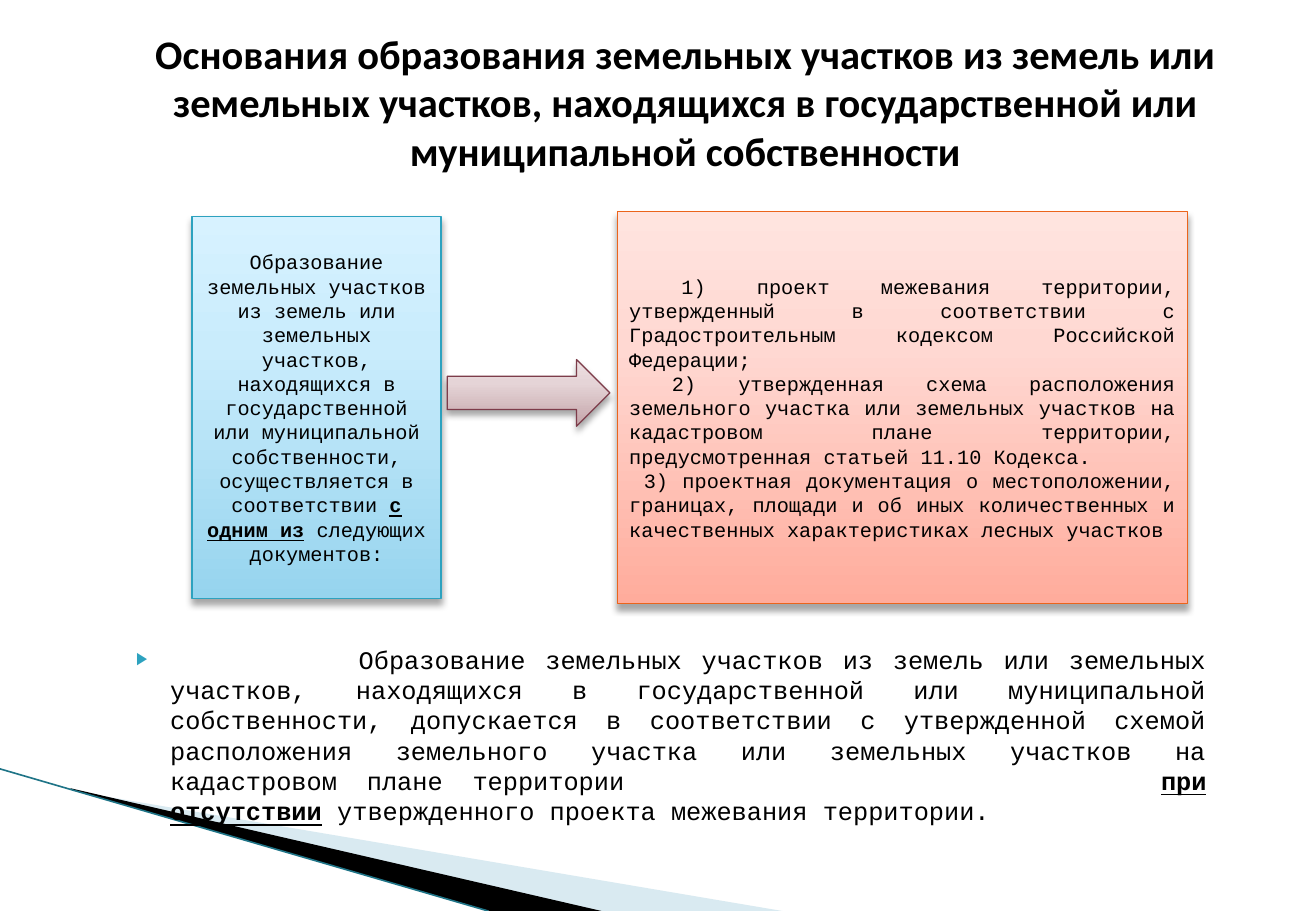
import copy
from dataclasses import dataclass

import pptx
import pptx.dml.color
import pptx.enum.shapes
import pptx.enum.text
import pptx.oxml
import pptx.oxml.ns
import pptx.util
from lxml import etree

ALIGN = pptx.enum.text.PP_ALIGN
ANCHOR = pptx.enum.text.MSO_ANCHOR
SHAPE = pptx.enum.shapes.MSO_SHAPE
qn = pptx.oxml.ns.qn


@dataclass(frozen=True)
class Theme:
    heading_font: str = "Calibri"
    text_font: str = "Courier New"
    title_size: int = 24
    body_size: int = 15
    box_size: int = 12
    ink: str = "000000"
    accent: str = "2DA2BF"
    pale: str = "A0CBDC"
    edge: str = "1F7487"
    # Each palette: outline, then gradient from bottom to top
    blue: tuple = ("2DA2BF", "96D4EE", "C9ECFC", "D7F2FF")
    coral: tuple = ("EB641B", "FFAC9C", "FFD8D2", "FFE4DF")
    mauve: tuple = ("7D3C4A", "C4A5A9", "E5D4D7", "EEE0E2")
    stops: tuple = (0, 0.65, 1)


def rgb(value):
    return pptx.dml.color.RGBColor.from_string(value)


def assign(target, values):
    for name, value in values.items():
        setattr(target, name, value)


def add_xml(parent, tag, **attributes):
    return etree.SubElement(parent, qn(tag), attributes)


class SlideBuilder:
    """Holds the theme and the slide; lengths are percent of the slide size."""

    def __init__(self, presentation, theme):
        self.theme = theme
        self.width, self.height = presentation.slide_width, presentation.slide_height
        self.slide = presentation.slides.add_slide(presentation.slide_layouts[1])
        self.shapes = self.slide.shapes

    def point(self, x, y):
        return int(self.width * x / 100), int(self.height * y / 100)

    def frame(self, left, top, width, height):
        return self.point(left, top) + self.point(width, height)

    def wedge(self, points, color, opacity=None):
        corners = [self.point(*point) for point in points]
        builder = self.shapes.build_freeform(*corners[0])
        builder.add_line_segments(corners[1:], close=True)
        shape = builder.convert_to_shape()
        shape.shadow.inherit = False
        shape.line.fill.background()
        shape.fill.solid()
        shape.fill.fore_color.rgb = rgb(color)
        if opacity:
            color_element = next(shape._element.spPr.iter(qn("a:srgbClr")))
            add_xml(color_element, "a:alpha", val=str(opacity * 1000))

    def line(self, start, end, color, width):
        connector = self.shapes.add_connector(
            pptx.enum.shapes.MSO_CONNECTOR.STRAIGHT, *self.point(*start), *self.point(*end))
        connector.line.color.rgb = rgb(color)
        connector.line.width = pptx.util.Pt(width)
        add_xml(connector._element.spPr, "a:effectLst")

    def panel(self, kind, frame, palette):
        shape = self.shapes.add_shape(kind, *self.frame(*frame))
        outline, *colors = palette
        shape.line.color.rgb = rgb(outline)
        shape.line.width = pptx.util.Pt(0.75)
        # Three-stop gradient
        shape.fill.gradient()
        shape.fill.gradient_angle = 90
        stop_list = next(shape._element.spPr.iter(qn("a:gsLst")))
        stop_list.append(copy.deepcopy(stop_list[-1]))
        for stop, color, position in zip(shape.fill.gradient_stops, colors, self.theme.stops):
            stop.color.rgb = rgb(color)
            stop.position = position
        # Soft shadow below
        shape.shadow.inherit = False
        effects = shape._element.spPr.find(qn("a:effectLst"))
        shadow = add_xml(effects, "a:outerShdw", blurRad=str(pptx.util.Pt(4)),
                         dist=str(pptx.util.Pt(3)), dir="5400000", rotWithShape="0")
        color_element = add_xml(shadow, "a:srgbClr", val=self.theme.ink)
        add_xml(color_element, "a:alpha", val="35000")
        return shape

    def placeholder(self, shape, frame):
        assign(shape, dict(zip(("left", "top", "width", "height"), self.frame(*frame))))
        self.shapes._spTree.append(shape._element)
        return shape

    def text(self, shape, paragraphs, size, font, align, anchor=ANCHOR.MIDDLE, indents=()):
        """Each paragraph is a list of (text, format values, letter spacing)."""
        text_frame = shape.text_frame
        assign(text_frame, {"word_wrap": True, "vertical_anchor": anchor,
                            "auto_size": pptx.enum.text.MSO_AUTO_SIZE.NONE})
        for index, runs in enumerate(paragraphs):
            paragraph = text_frame.add_paragraph() if index else text_frame.paragraphs[0]
            assign(paragraph, {"alignment": align, "space_before": pptx.util.Pt(0)})
            if indents:
                properties = paragraph._p.get_or_add_pPr()
                properties.set("marL", "0")
                properties.set("indent", str(pptx.util.Inches(indents[index])))
            for content, values, spacing in runs:
                run = paragraph.add_run()
                run.text = content
                assign(run.font, {"name": font, "size": pptx.util.Pt(size), **values})
                run.font.color.rgb = rgb(self.theme.ink)
                if spacing:
                    run._r.get_or_add_rPr().set("spc", str(spacing * 100))

    def bullet(self, paragraph, margin, indent):
        properties = paragraph._p.get_or_add_pPr()
        properties.set("marL", str(pptx.util.Inches(margin)))
        properties.set("indent", str(pptx.util.Inches(indent)))
        color = add_xml(properties, "a:buClr")
        add_xml(color, "a:srgbClr", val=self.theme.accent)
        add_xml(properties, "a:buSzPct", val="68000")
        add_xml(properties, "a:buChar", char="▶")


def plain(content, spacing=0):
    return content, {"bold": False}, spacing


def strong(content, underline=True):
    return content, {"bold": True, "underline": underline}, 0


def main():
    presentation = pptx.Presentation()
    presentation.slide_width = pptx.util.Inches(10.83)
    presentation.slide_height = pptx.util.Inches(7.5)
    theme = Theme()
    builder = SlideBuilder(presentation, theme)

    # Corner decoration
    builder.wedge([(5.45, 86.8), (59.46, 100), (45.61, 100), (5.45, 86.67)], theme.pale, 40)
    builder.wedge([(5.36, 86.53), (45.7, 100), (37.2, 100), (5.36, 86.67)], theme.ink)
    builder.line((0, 84.4), (37.1, 100), theme.edge, 0.95)

    # Title
    title = builder.placeholder(builder.shapes.title, (8.59, 2.8, 86.98, 16.67))
    builder.text(title, [[strong(
        "Основания образования земельных участков из земель или земельных участков, "
        "находящихся в государственной или муниципальной собственности", False)]],
        theme.title_size, theme.heading_font, ALIGN.CENTER)

    # Closing statement
    body = builder.placeholder(builder.slide.placeholders[1], (8.31, 70, 84.3, 18.4))
    builder.text(body, [[
        plain(" ", 100),
        plain("Образование земельных участков из земель или земельных участков, находящихся "
              "в государственной или муниципальной собственности, допускается в соответствии "
              "с утвержденной схемой расположения земельного участка или земельных участков "
              "на кадастровом плане территории"),
        plain(" ", 300),
        strong("при отсутствии"),
        plain(" утвержденного проекта межевания территории.")]],
        theme.body_size, theme.text_font, ALIGN.JUSTIFY, ANCHOR.TOP)
    builder.bullet(body.text_frame.paragraphs[0], 0.4, -0.28)

    # Documents
    documents = builder.panel(SHAPE.RECTANGLE, (46.91, 23.2, 43.31, 43.07), theme.coral)
    items = (
        "1) проект межевания территории, утвержденный в соответствии с "
        "Градостроительным кодексом Российской Федерации;",
        "2) утвержденная схема расположения земельного участка или земельных участков "
        "на кадастровом плане территории, предусмотренная статьей 11.10 Кодекса.",
        "3) проектная документация о местоположении, границах, площади и об иных "
        "количественных и качественных характеристиках лесных участков")
    builder.text(documents, [[plain(item)] for item in items],
                 theme.box_size, theme.text_font, ALIGN.JUSTIFY, indents=(0.43, 0.35, 0.12))

    # Basis
    basis = builder.panel(SHAPE.RECTANGLE, (14.59, 23.73, 18.93, 42), theme.blue)
    builder.text(basis, [[
        plain("Образование земельных участков из земель или земельных участков, находящихся "
              "в государственной или муниципальной собственности, осуществляется "
              "в соответствии "),
        strong("с одним из"),
        plain(" следующих документов:")]],
        theme.box_size, theme.text_font, ALIGN.CENTER)

    # Arrow from basis to documents
    builder.panel(SHAPE.RIGHT_ARROW, (33.98, 39.47, 12.37, 7.33), theme.mauve)

    presentation.save("out.pptx")


if __name__ == "__main__":
    main()
